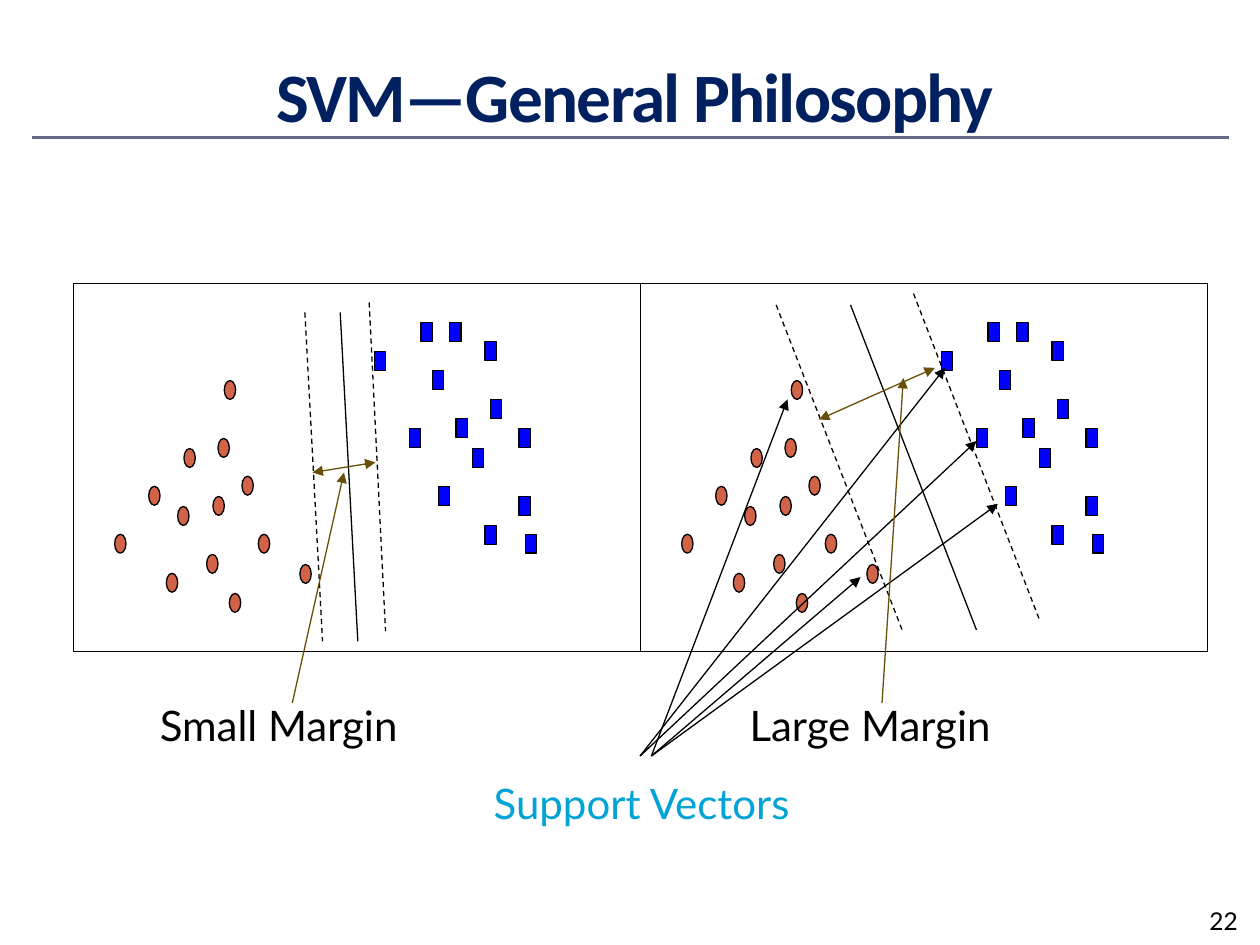
from dataclasses import dataclass

from pptx import Presentation
from pptx.dml.color import RGBColor
from pptx.enum.dml import MSO_LINE
from pptx.enum.shapes import MSO_CONNECTOR, MSO_SHAPE
from pptx.enum.text import MSO_ANCHOR, MSO_AUTO_SIZE, PP_ALIGN
from pptx.oxml.ns import qn
from pptx.util import Inches, Pt
from lxml import etree

OVAL, RECT = MSO_SHAPE.OVAL, MSO_SHAPE.RECTANGLE
DASH, STRAIGHT = MSO_LINE.DASH, MSO_CONNECTOR.STRAIGHT


@dataclass(frozen=True)
class Theme:
    navy = RGBColor.from_string("002060")
    slate = RGBColor.from_string("646B86")
    black = RGBColor.from_string("000000")
    red = RGBColor.from_string("D16349")
    blue = RGBColor.from_string("0000FF")
    brown = RGBColor.from_string("694F07")
    cyan = RGBColor.from_string("00A3D6")
    title = Pt(39.6)
    label = Pt(24)
    number = Pt(14)
    thin = Pt(0.75)
    rule = Pt(1.5)


theme = Theme()


def draw_line(shapes, ends, color=theme.black, width=theme.thin, dash=None, tips=()):
    """Draw from (x1, y1) to (x2, y2); tips names the ends with arrowheads."""
    line = shapes.add_connector(STRAIGHT, *[Inches(v) for v in ends])
    line.line.color.rgb = color
    line.line.width = width
    if dash:
        line.line.dash_style = dash
    props = line._element.spPr
    for tip in tips:
        etree.SubElement(props.find(qn("a:ln")), qn("a:" + tip), type="triangle")
    etree.SubElement(props, qn("a:effectLst"))


def draw_shape(shapes, kind, box, fill=None):
    shape = shapes.add_shape(kind, *[Inches(v) for v in box])
    shape.shadow.inherit = False
    shape.line.color.rgb = theme.black
    shape.line.width = theme.thin
    if fill is None:
        shape.fill.background()
    else:
        shape.fill.solid()
        shape.fill.fore_color.rgb = fill


deck = Presentation()
deck.slide_width, deck.slide_height = Inches(10), Inches(7.5)
slide = deck.slides.add_slide(deck.slide_layouts[5])
shapes = slide.shapes

# Title and rule
draw_line(shapes, (0.25, 1.09, 9.75, 1.09), theme.slate, theme.rule)
title = shapes.title
title.left, title.top = Inches(0.33), Inches(0.42)
title.width, title.height = Inches(9.42), Inches(0.67)
frame = title.text_frame
frame.text = "SVM—General Philosophy"
frame.auto_size = MSO_AUTO_SIZE.NONE
frame.vertical_anchor = MSO_ANCHOR.MIDDLE
para = frame.paragraphs[0]
para.alignment = PP_ALIGN.CENTER
para.font.name, para.font.size = "Calibri", theme.title
para.font.bold = True
para.font.color.rgb = theme.navy
para.runs[0].font._element.set("spc", "-100")

# Two panels with the same points, each with its own boundary and margins
DOTS = [(1.32, 4.55), (1.41, 4.02), (0.91, 4.24), (1.18, 3.86), (1.64, 4.4),
        (1.46, 3.56), (1.69, 3.94), (1.73, 3.48), (1.92, 3.78), (2.05, 4.24),
        (1.82, 4.71), (2.38, 4.48), (1.78, 3.02)]
BLOCKS = [(3.25, 3.4), (2.97, 2.79), (3.34, 2.56), (3.48, 3.86), (3.43, 2.94),
          (3.62, 3.32), (3.57, 2.56), (3.85, 2.71), (3.75, 3.56), (3.89, 3.17),
          (3.85, 4.17), (4.12, 3.4), (4.12, 3.94), (4.17, 4.24)]
PANELS = [
    (0, [((2.42, 2.48, 2.56, 5.09), DASH), ((2.7, 2.48, 2.84, 5.09), None),
         ((2.93, 2.4, 3.06, 5.01), DASH)]),
    (4.5, [((6.16, 2.42, 7.16, 5), DASH), ((6.75, 2.42, 7.75, 5), None),
           ((7.25, 2.33, 8.25, 4.92), DASH)]),
]
for shift, bounds in PANELS:
    panel = shapes.add_group_shape().shapes
    for kind, fill, points in ((OVAL, theme.red, DOTS), (RECT, theme.blue, BLOCKS)):
        for x, y in points:
            draw_shape(panel, kind, (x + shift, y, 0.09, 0.15), fill)
    draw_shape(panel, RECT, (0.585 + shift, 2.25, 4.5, 2.92))
    for ends, dash in bounds:
        draw_line(panel, ends, dash=dash)

# Arrows to the support vectors
for ends in [(5.08, 6, 7.5, 2.92), (5.08, 6, 7.75, 3.5), (5.17, 6, 7.92, 4),
             (5.17, 6, 6.83, 4.58), (5.17, 6, 6.25, 3.17)]:
    draw_line(shapes, ends, tips=["tailEnd"])

# Margin widths, with pointers from their labels
for width, pointer in [((2.48, 3.75, 2.98, 3.67), (2.32, 5.58, 2.73, 3.75)),
                       ((6.5, 3.33, 7.42, 2.92), (7, 5.58, 7.17, 3))]:
    draw_line(shapes, width, theme.brown, tips=["headEnd", "tailEnd"])
    draw_line(shapes, pointer, theme.brown, tips=["tailEnd"])

# Labels and page number
for text, box, size, color in [
    ("Support Vectors", (3.82, 6.12, 2.55, 0.5), theme.label, theme.cyan),
    ("Small Margin", (1.17, 5.5, 2.1, 0.5), theme.label, theme.black),
    ("Large Margin", (5.85, 5.5, 2.12, 0.5), theme.label, theme.black),
    ("22", (9.5, 7.14, 0.5, 0.36), theme.number, theme.black),
]:
    frame = shapes.add_textbox(*[Inches(v) for v in box]).text_frame
    frame.word_wrap = False
    frame.text = text
    font = frame.paragraphs[0].font
    font.name, font.size = "Lato", size
    font.color.rgb = color

deck.save("out.pptx")
